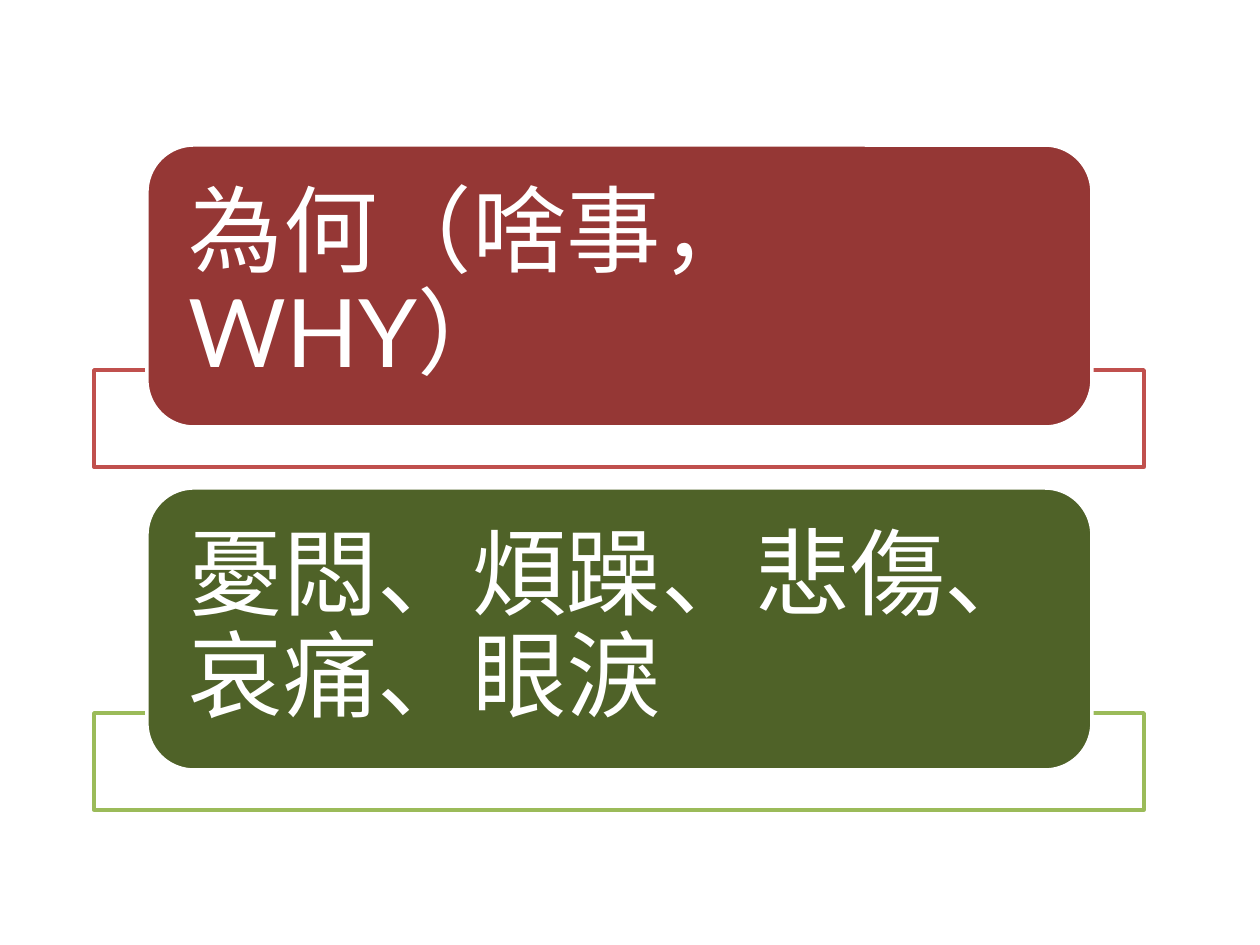
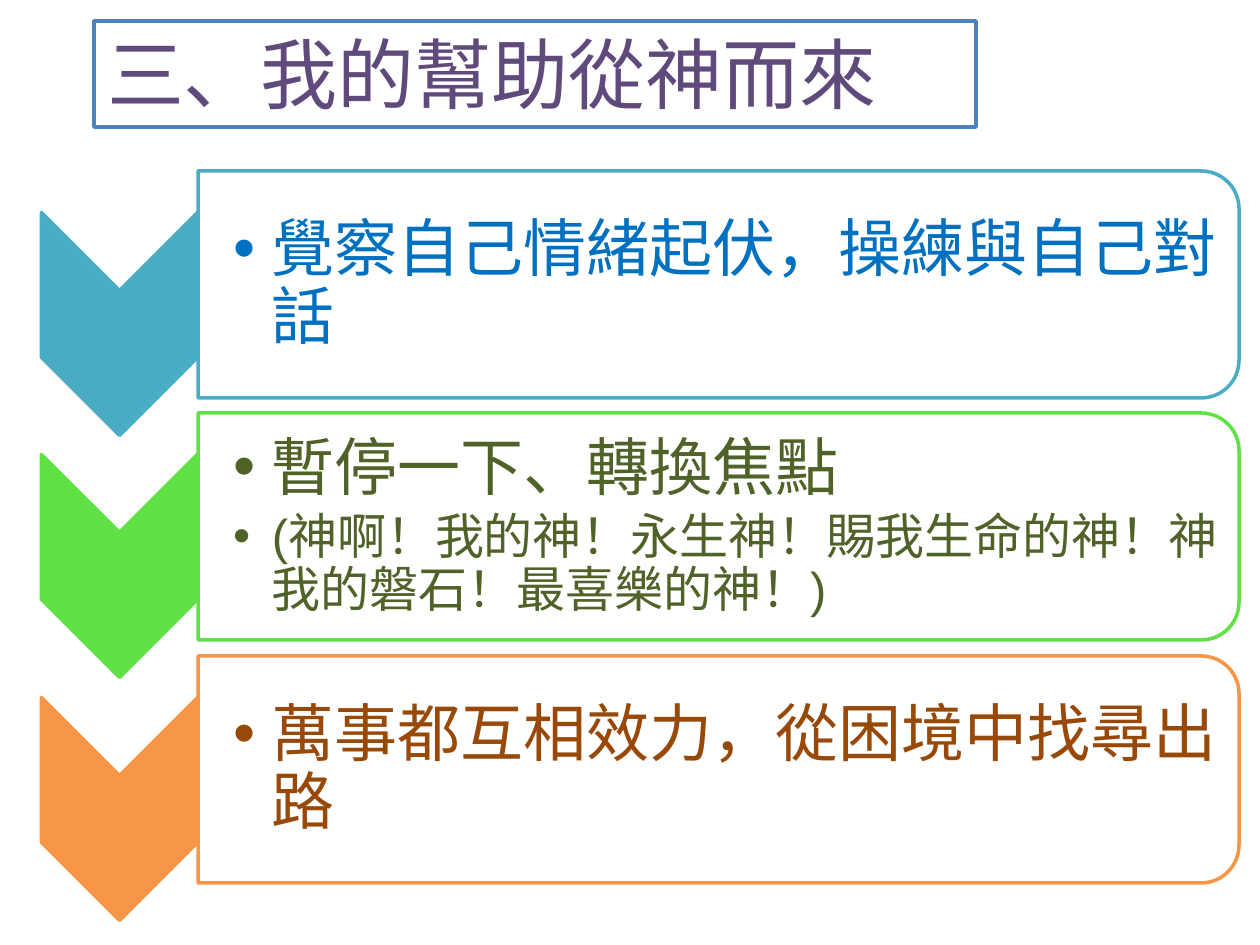
from lxml.etree import SubElement
from pptx import Presentation
from pptx.dml.color import RGBColor
from pptx.enum.shapes import MSO_SHAPE
from pptx.enum.text import MSO_ANCHOR, MSO_AUTO_SIZE, PP_ALIGN
from pptx.oxml.ns import qn
from pptx.util import Emu, Pt

SCALE = 914400 / 126
TITLE_ONLY, BLANK = 5, 6
COLOURS = {
    "white": "FFFFFF",
    "red": "C0504D",
    "dark_red": "953735",
    "green": "9BBB59",
    "dark_green": "4F6228",
    "blue": "4F81BD",
    "purple": "604A7B",
    "aqua": "4BACC6",
    "bright_blue": "0070C0",
    "lime": "60E146",
    "orange": "F79646",
    "brown": "984807",
}
FEELINGS = [
    ("為何（啥事，WHY）", "dark_red", "red"),
    ("憂悶、煩躁、悲傷、哀痛、眼淚", "dark_green", "green"),
]
STEPS = [
    ("aqua", "bright_blue", [("覺察自己情緒起伏，操練與自己對話", 36)]),
    ("lime", "dark_green", [
        ("暫停一下、轉換焦點", 36),
        ("(神啊！我的神！永生神！賜我生命的神！神我的磐石！最喜樂的神！)", 28),
    ]),
    ("orange", "brown", [("萬事都互相效力，從困境中找尋出路", 36)]),
]


def px(length):
    return Emu(round(length * SCALE))


def colour(name):
    return RGBColor.from_string(COLOURS[name])


def paint(shape, fill, line, opacity=100):
    shape.fill.solid()
    shape.fill.fore_color.rgb = colour(fill)
    shape.line.color.rgb = colour(line)
    shape.line.width = Pt(2)
    if opacity < 100:
        tint = shape.fill._xPr.find(qn("a:solidFill"))[0]
        SubElement(tint, qn("a:alpha"), val=str(opacity * 1000))


def add_block(page, kind, box, fill, line, opacity=100):
    shape = page.shapes.add_shape(kind, *map(px, box))
    shape.shadow.inherit = False
    paint(shape, fill, line, opacity)
    return shape


def add_turned_block(page, kind, box, fill, line, opacity=100):
    left, top, width, height = box
    shift = (width - height) // 2
    turned = (left + shift, top - shift, height, width)
    shape = add_block(page, kind, turned, fill, line, opacity)
    shape.rotation = 90
    return shape


def set_frame(frame, insets, anchor=MSO_ANCHOR.MIDDLE):
    frame.word_wrap = True
    frame.vertical_anchor = anchor
    (frame.margin_left, frame.margin_top,
     frame.margin_right, frame.margin_bottom) = map(px, insets)


def write(para, text, size, font, ink, spacing=None, after=0, bullet_indent=0):
    para.alignment = PP_ALIGN.LEFT
    para.line_spacing = spacing
    para.space_after = Pt(after)
    if bullet_indent:
        para.level = 1
        properties = para._p.get_or_add_pPr()
        properties.set("marL", str(px(bullet_indent)))
        properties.set("indent", str(-px(bullet_indent)))
        SubElement(properties, qn("a:buFont"), typeface="Arial")
        SubElement(properties, qn("a:buChar"), char="•")
    span = para.add_run()
    span.text = text
    span.font.size = Pt(size)
    span.font.name = font
    span.font.color.rgb = colour(ink)


def add_title(page, text):
    title = page.shapes.title
    title.left, title.top, title.width, title.height = map(px, (94, 21, 882, 106))
    paint(title, "white", "blue")
    set_frame(title.text_frame, (13, 6, 13, 6), MSO_ANCHOR.TOP)
    title.text_frame.auto_size = MSO_AUTO_SIZE.SHAPE_TO_FIT_TEXT
    write(title.text_frame.paragraphs[0], text, 44, "Arial", "purple")


def add_feeling(page, top, text, fill, line):
    add_block(page, MSO_SHAPE.RECTANGLE, (94, top + 225, 1050, 97),
              "white", line, opacity=90)
    card = add_block(page, MSO_SHAPE.ROUNDED_RECTANGLE, (147, top, 945, 282),
                     fill, "white")
    set_frame(card.text_frame, (28, 0, 28, 0))
    write(card.text_frame.paragraphs[0], text, 54, "Lato", "white",
          spacing=0.9, after=19)


def add_step(page, top, accent, ink, lines):
    add_turned_block(page, MSO_SHAPE.CHEVRON, (42, top + 41, 156, 223),
                     accent, accent)
    add_turned_block(page, MSO_SHAPE.ROUND_2_SAME_RECTANGLE,
                     (198, top, 1041, 227), "white", accent, opacity=90)
    box = page.shapes.add_textbox(*map(px, (198, top + 12, 1029, 204)))
    frame = box.text_frame
    set_frame(frame, (35, 4, 4, 4))
    for index, (text, size) in enumerate(lines):
        para = frame.add_paragraph() if index else frame.paragraphs[0]
        write(para, text, size, "Arial", ink, spacing=0.9,
              after=round(size * 0.15), bullet_indent=39)


def main():
    deck = Presentation()
    deck.slide_width, deck.slide_height = px(1260), px(945)

    page = deck.slides.add_slide(deck.slide_layouts[BLANK])
    for index, feeling in enumerate(FEELINGS):
        add_feeling(page, 145 + 343 * index, *feeling)

    page = deck.slides.add_slide(deck.slide_layouts[TITLE_ONLY])
    add_title(page, "三、我的幫助從神而來")
    for index, step in enumerate(STEPS):
        add_step(page, 171 + 485 * index // 2, *step)

    deck.save("out.pptx")


if __name__ == "__main__":
    main()
